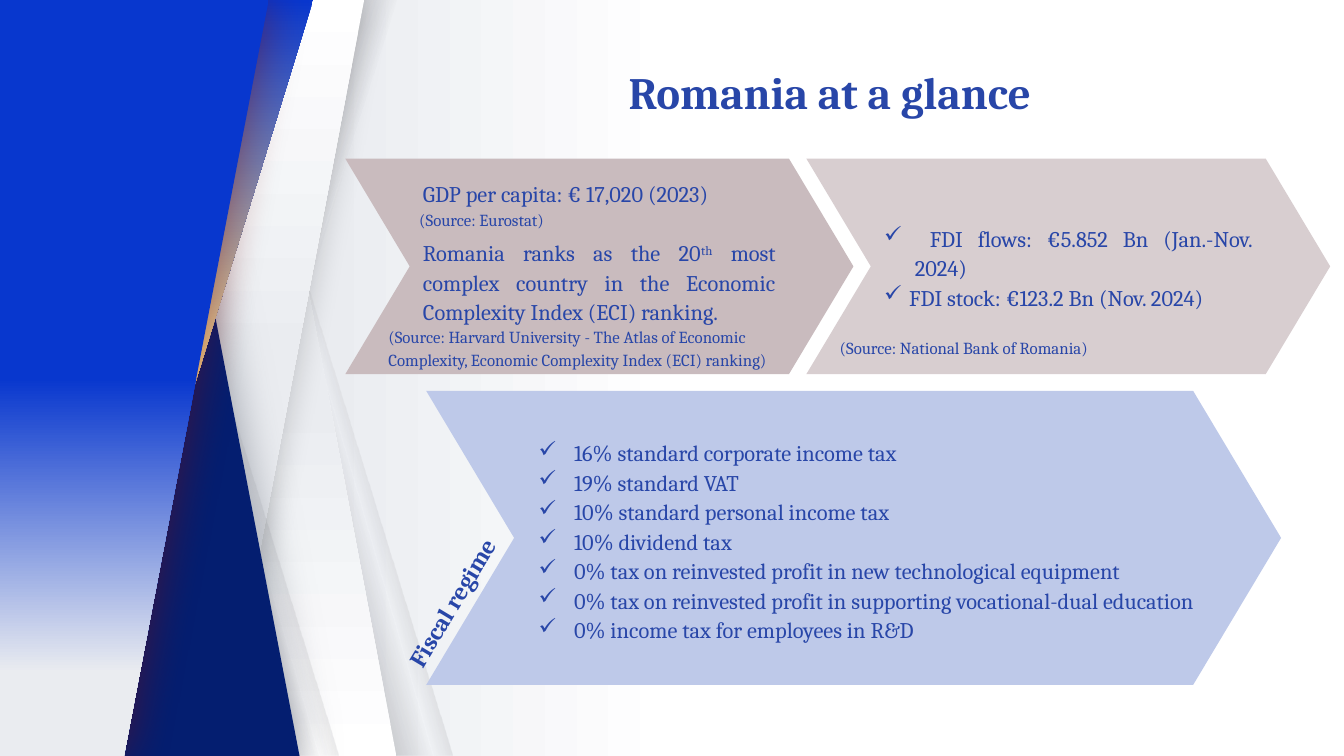
from dataclasses import dataclass
from typing import Optional

from lxml import etree
from pptx import Presentation
from pptx import util as u
from pptx.dml import color
from pptx.enum import shapes, text
from pptx.oxml import ns

Pt = u.Pt
BLUE = "2846A8"
FONT = "Cambria"
WIDTH, HEIGHT = 720, 405
BAND_WIDTH = 165.6
STEEP, WIDE = 0.753, 0.463
LEFT, CENTER, JUSTIFY = text.PP_ALIGN.LEFT, text.PP_ALIGN.CENTER, text.PP_ALIGN.JUSTIFY


@dataclass
class Gradient:
    stops: list  # (position %, colour[, opacity %])
    angle: float


@dataclass
class Shadow:
    hex_color: str
    opacity: float
    blur: float


@dataclass
class Band:
    left: float
    slant: float
    fill: Gradient
    flip: bool = False
    shadow: Optional[Shadow] = None


@dataclass
class Panel:
    outline: list
    fill: object
    shadow: Shadow


@dataclass
class Chevron:
    left: float
    top: float
    width: float
    height: float
    fill: str


def rgb(hex_color: str) -> color.RGBColor:
    return color.RGBColor.from_string(hex_color)


def add_node(parent, tag: str, **attributes):
    return etree.SubElement(parent, ns.qn(tag), {k: str(v) for k, v in attributes.items()})


def add_color(parent, hex_color: str, opacity: float = 100) -> None:
    node = add_node(parent, "a:srgbClr", val=hex_color)
    if opacity < 100:
        add_node(node, "a:alpha", val=int(opacity * 1000))


def paint(fill, owner, paint_with) -> None:
    """Fill with a hex colour or a Gradient; owner is the XML holding the fill."""
    fill.solid()
    if isinstance(paint_with, str):
        fill.fore_color.rgb = rgb(paint_with)
        return
    solid = owner.find(ns.qn("a:solidFill"))
    gradient = etree.Element(ns.qn("a:gradFill"), rotWithShape="1")
    stop_list = add_node(gradient, "a:gsLst")
    for position, *stop_color in paint_with.stops:
        add_color(add_node(stop_list, "a:gs", pos=position * 1000), *stop_color)
    add_node(gradient, "a:lin", ang=int(paint_with.angle * 60000), scaled=0)
    owner.replace(solid, gradient)


def finish(shape, paint_with, shadow: Optional[Shadow] = None) -> None:
    properties = shape._element.spPr
    paint(shape.fill, properties, paint_with)
    shape.line.fill.background()
    shape.shadow.inherit = False
    if shadow:
        effects = properties.find(ns.qn("a:effectLst"))
        outer = add_node(effects, "a:outerShdw", blurRad=Pt(shadow.blur), dist=0, dir=0,
                         algn="ctr", rotWithShape=0)
        add_color(outer, shadow.hex_color, shadow.opacity)


def draw_band(slide, band: Band) -> None:
    shape = slide.shapes.add_shape(shapes.MSO_SHAPE.PARALLELOGRAM, Pt(band.left), 0,
                                   Pt(BAND_WIDTH), Pt(HEIGHT))
    shape.adjustments[0] = band.slant
    if band.flip:
        shape._element.spPr.xfrm.set("flipH", "1")
    finish(shape, band.fill, band.shadow)


def draw_panel(slide, panel: Panel) -> None:
    start, *rest = [(Pt(x), Pt(y)) for x, y in panel.outline]
    builder = slide.shapes.build_freeform(*start)
    builder.add_line_segments(rest, close=True)
    finish(builder.convert_to_shape(), panel.fill, panel.shadow)


def draw_chevron(slide, chevron: Chevron):
    shape = slide.shapes.add_shape(
        shapes.MSO_SHAPE.CHEVRON, Pt(chevron.left), Pt(chevron.top),
        Pt(chevron.width), Pt(chevron.height))
    shape.adjustments[0] = 0.299
    finish(shape, chevron.fill)
    frame = shape.text_frame
    frame.word_wrap = True
    frame.vertical_anchor = text.MSO_ANCHOR.MIDDLE
    frame.margin_left = frame.margin_right = frame.margin_top = frame.margin_bottom = Pt(7.2)
    return frame


def add_box(slide, left: float, top: float, width: float, height: float,
            inset: bool = True, anchor=text.MSO_ANCHOR.TOP, rotation: float = 0):
    box = slide.shapes.add_textbox(Pt(left), Pt(top), Pt(width), Pt(height))
    box.rotation = rotation
    frame = box.text_frame
    frame.word_wrap = True
    frame.vertical_anchor = anchor
    if not inset:
        frame.margin_left = frame.margin_right = frame.margin_top = frame.margin_bottom = 0
    return frame


def write(frame, content: str, *, size: float = 12, bold: bool = False, align=JUSTIFY,
          spacing: float = 1.1, before: float = 0, check_indent: float = 0,
          superscript: str = "", tail: str = "") -> None:
    """Add a paragraph: content, then an optional superscript and the words after it."""
    paragraph = frame.paragraphs[0]
    if paragraph.runs:
        paragraph = frame.add_paragraph()
    paragraph.alignment = align
    paragraph.line_spacing = spacing
    if before:
        paragraph.space_before = Pt(before)
    if check_indent:
        properties = paragraph._p.get_or_add_pPr()
        properties.set("marL", str(Pt(check_indent)))
        properties.set("indent", str(-Pt(check_indent)))
        add_color(add_node(properties, "a:buClr"), BLUE)
        add_node(properties, "a:buChar", char="✓")
    for part in filter(None, (content, superscript, tail)):
        run = paragraph.add_run()
        run.text = part
        run.font.name, run.font.size, run.font.bold = FONT, Pt(size), bold
        run.font.color.rgb = rgb(BLUE)
        if part == superscript:
            run.font._element.set("baseline", "30000")


def shade(angle: float, fade: int) -> Gradient:
    return Gradient([(0, "3E4655"), (13, "3E4655"), (fade, "27252C", 0), (100, "27252C")], angle)


def pale(angle: float) -> Gradient:
    return Gradient([(0, "FFFFFF"), (47, "EAECF0"), (100, "EAECF0")], angle)


DECORATION = [
    Band(77, STEEP, shade(196, 55), flip=True),
    Band(46.8, WIDE, pale(270), flip=True),
    Band(46.8, STEEP, shade(18, 56)),
    Band(29.5, WIDE, pale(90), shadow=Shadow("000000", 20, 16.9)),
    Band(15.8, STEEP, shade(196, 55), flip=True),
    Panel([(0, 0), (0, HEIGHT), (160.5, HEIGHT), (82.8, 0)], "041E70",
          Shadow("3E4655", 50, 24.8)),
    Band(2.2, STEEP, Gradient([(0, "0837CE"), (50, "FFDF8C"), (89, "FFFFFF"),
                               (100, "FFEAB3")], 90)),
    Panel([(0, HEIGHT), (0, 0), (144, 0), (66.4, HEIGHT)],
          Gradient([(0, "0837CE"), (50, "0837CE"), (89, "EAECF0"), (100, "EAECF0")], 90),
          Shadow("7E0808", 50, 24.8)),
]
FISCAL_ITEMS = [
    "16% standard corporate income tax",
    "19% standard VAT",
    "10% standard personal income tax",
    "10% dividend tax",
    "0% tax on reinvested profit in new technological equipment",
    "0% tax on reinvested profit in supporting vocational-dual education",
    "0% income tax for employees in R&D",
]


def main() -> None:
    deck = Presentation()
    deck.slide_width, deck.slide_height = Pt(WIDTH), Pt(HEIGHT)
    slide = deck.slides.add_slide(deck.slide_layouts[6])

    # Background and slanted bands
    backdrop = slide.background.fill
    backdrop.solid()
    paint(backdrop, slide._element.find(".//" + ns.qn("p:bgPr")),
          Gradient([(0, "FFFFFF"), (50, "FFFFFF"), (76, "EAECF0"), (100, "EAECF0")], 180))
    for piece in DECORATION:
        (draw_band if isinstance(piece, Band) else draw_panel)(slide, piece)

    # Title
    title = add_box(slide, 185, 33, 519, 31, inset=False, anchor=text.MSO_ANCHOR.BOTTOM)
    write(title, "Romania at a glance", size=24, bold=True, align=CENTER, spacing=0.9)

    # Foreign investment
    investment = draw_chevron(slide, Chevron(432, 85, 280.6, 115.4, "D8CED0"))
    write(investment, " FDI flows: €5.852 Bn (Jan.-Nov. 2024)", check_indent=16.5)
    write(investment, "FDI stock: €123.2 Bn (Nov. 2024)", check_indent=13.5)

    # Fiscal regime
    draw_chevron(slide, Chevron(228.3, 209.4, 458, 157.6, "BEC9E9"))
    fiscal = add_box(slide, 281.5, 230.4, 396, 119.5)
    for item in FISCAL_ITEMS:
        write(fiscal, item, check_indent=19)
    fiscal_label = add_box(slide, 198, 316, 89.3, 14.4, inset=False, rotation=301)
    write(fiscal_label, "Fiscal regime", size=13, bold=True, align=CENTER, spacing=0.93)

    # Economy
    economy = draw_chevron(slide, Chevron(185, 85, 272.2, 115.4, "C9BBBE"))
    economy.margin_bottom = Pt(23)
    write(economy, "GDP per capita: € 17,020 (2023)")
    write(economy, "Romania ranks as the 20", before=15.8, superscript="th",
          tail=" most complex country in the Economic Complexity Index (ECI) ranking.")

    # Sources
    write(add_box(slide, 217.5, 108, 90, 19.4), "(Source: Eurostat)", size=9, align=LEFT)
    write(add_box(slide, 442.8, 176.4, 160, 19.4), "(Source: National Bank of Romania)",
          size=9, align=LEFT)
    ranking_source = add_box(slide, 201, 170.6, 235, 31)
    for line in ("(Source: Harvard University - The Atlas of Economic",
                 "Complexity, Economic Complexity Index (ECI) ranking)"):
        write(ranking_source, line, size=9, align=LEFT)

    deck.save("out.pptx")


if __name__ == "__main__":
    main()
